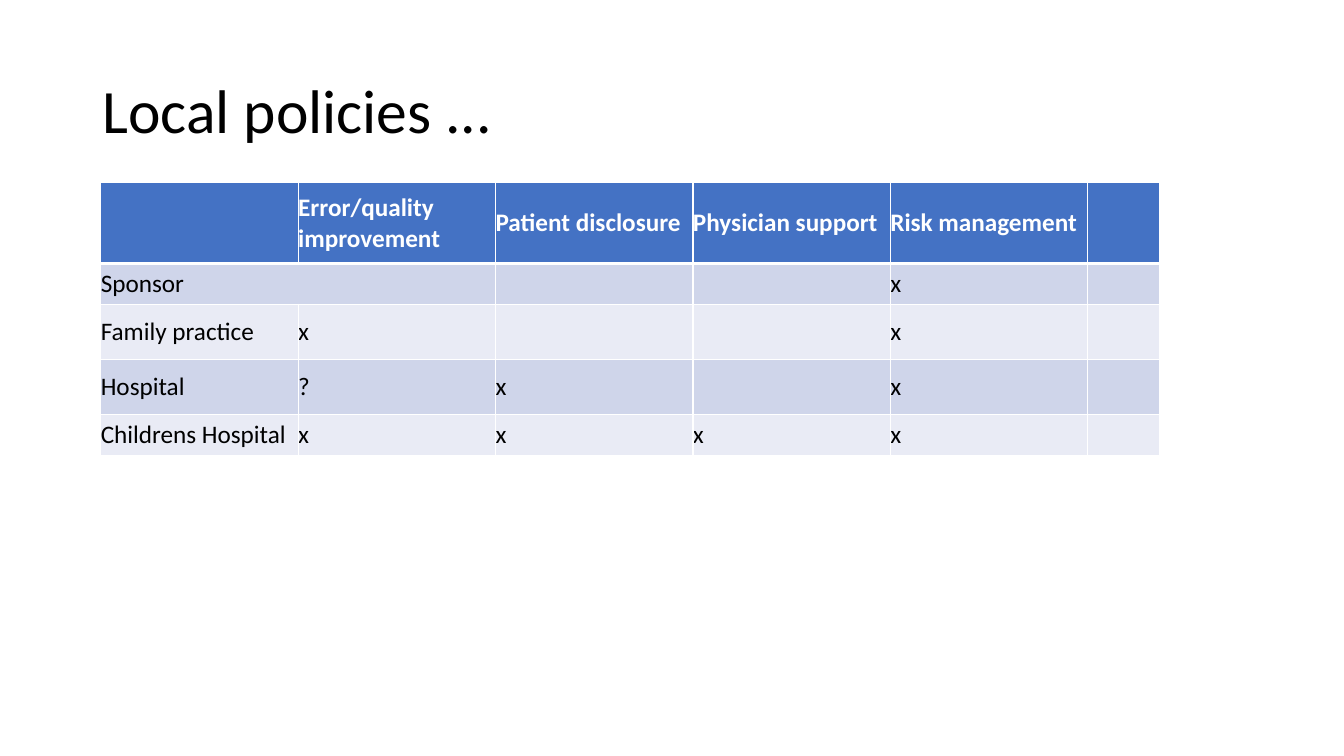
"""Build the slide with a table of local policies."""
import pptx
import pptx.dml.color
import pptx.enum.text
import pptx.util
import lxml.etree

Pt = pptx.util.Pt
RGB = pptx.dml.color.RGBColor
MID = pptx.enum.text.MSO_ANCHOR.MIDDLE
BLACK = RGB(0, 0, 0)
WHITE = RGB(255, 255, 255)
BLUE = RGB(0x44, 0x72, 0xC4)
BANDS = [RGB(0xE9, 0xEB, 0xF5), RGB(0xCF, 0xD5, 0xEA)]
NS = "{http://schemas.openxmlformats.org/drawingml/2006/main}"


def write(frame, text, size=18, color=BLACK, bold=False, space=1.0):
    para = frame.paragraphs[0]
    para.line_spacing = space
    run = para.add_run()
    run.text = text
    run.font.name = "Calibri"
    run.font.size = Pt(size)
    run.font.bold = bold
    run.font.color.rgb = color


def edge(cell, side, width):
    line = lxml.etree.SubElement(cell._tc.get_or_add_tcPr(), NS + side, w=str(Pt(width)))
    fill = lxml.etree.SubElement(line, NS + "solidFill")
    lxml.etree.SubElement(fill, NS + "srgbClr", val=str(WHITE))


deck = pptx.Presentation()
deck.slide_width = Pt(960)
deck.slide_height = Pt(540)
slide = deck.slides.add_slide(deck.slide_layouts[6])

title = slide.shapes.add_textbox(Pt(66), Pt(28.75), Pt(828), Pt(104.4)).text_frame
title.word_wrap = True
title.vertical_anchor = MID
write(title, "Local policies ...", size=44, space=0.9)

rows = [
    ["", "Error/quality improvement", "Patient disclosure", "Physician support", "Risk management", ""],
    ["Sponsor", "", "", "", "x", ""],
    ["Family practice", "x", "", "", "x", ""],
    ["Hospital", "?", "x", "", "x", ""],
    ["Childrens Hospital", "x", "x", "x", "x", ""],
]
wide = [141] * 5 + [51]
high = [58, 29, 39.5, 39.5, 29]
grid = slide.shapes.add_table(len(rows), len(wide), Pt(72), Pt(130.3), Pt(sum(wide)), Pt(sum(high))).table
for col, width in zip(grid.columns, wide):
    col.width = Pt(width)
for row, height in zip(grid.rows, high):
    row.height = Pt(height)

for r, texts in enumerate(rows):
    head = r == 0
    for c, text in enumerate(texts):
        cell = grid.cell(r, c)
        cell.margin_left = cell.margin_right = cell.margin_top = cell.margin_bottom = 0
        cell.vertical_anchor = MID
        edge(cell, "lnL", 1)
        edge(cell, "lnR", 1)
        edge(cell, "lnT", 3 if r == 1 else 1)
        edge(cell, "lnB", 3 if head else 1)
        cell.fill.solid()
        cell.fill.fore_color.rgb = BLUE if head else BANDS[r % 2]
        if text:
            write(cell.text_frame, text, color=WHITE if head else BLACK, bold=head)
grid.cell(1, 0).merge(grid.cell(1, 1))

deck.save("out.pptx")
